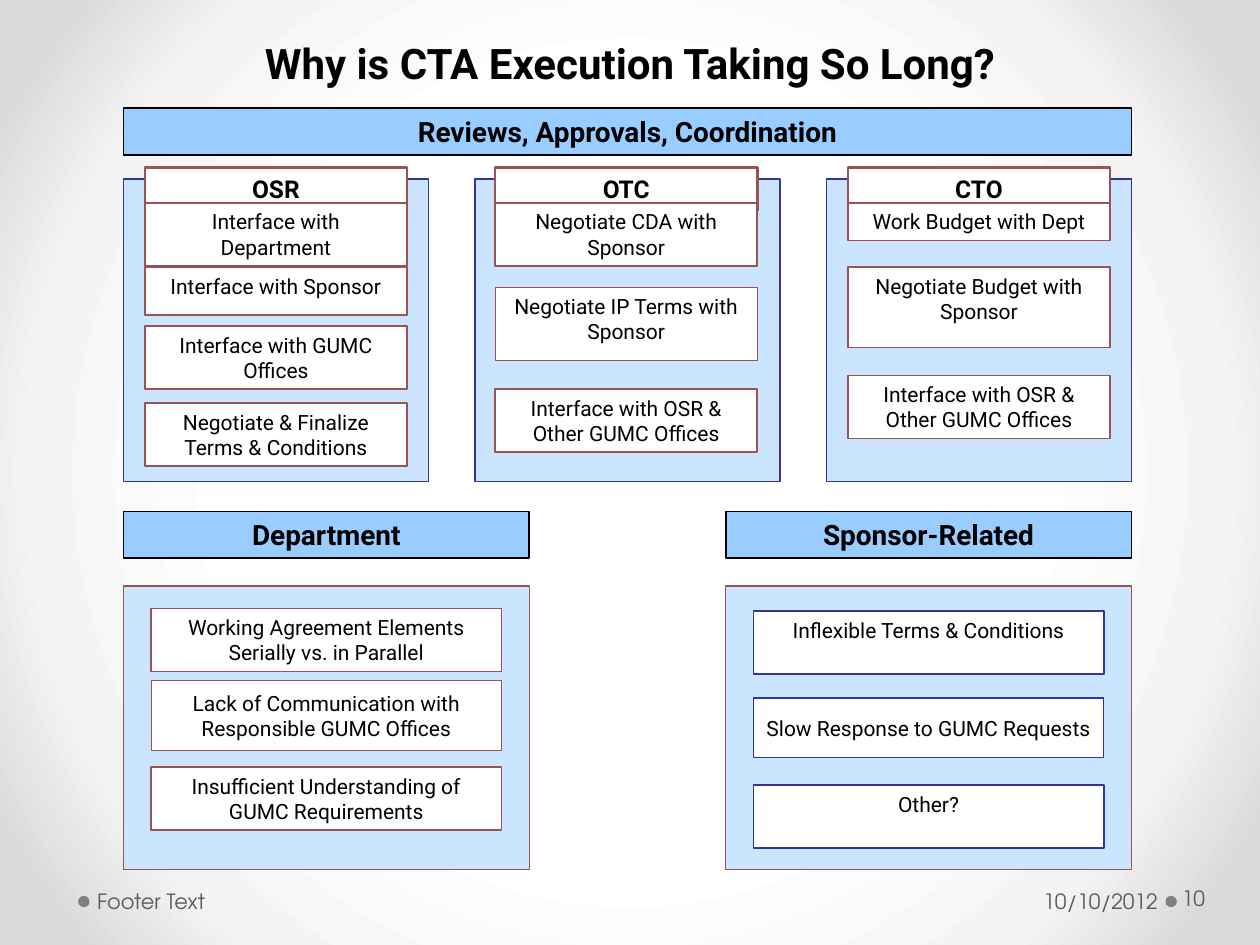
from lxml import etree
from pptx import Presentation
from pptx.dml.color import RGBColor
from pptx.enum.shapes import MSO_SHAPE
from pptx.enum.text import MSO_ANCHOR, PP_ALIGN
from pptx.oxml.ns import qn
from pptx.util import Inches, Pt

RECT, OVAL = MSO_SHAPE.RECTANGLE, MSO_SHAPE.OVAL
TOP, MIDDLE = MSO_ANCHOR.TOP, MSO_ANCHOR.MIDDLE
LEFT, CENTER, RIGHT = PP_ALIGN.LEFT, PP_ALIGN.CENTER, PP_ALIGN.RIGHT

COLORS = {
    "black": "000000", "white": "FFFFFF", "banner": "99CCFF", "panel": "CBE5FF",
    "red": "9C5252", "blue": "333399", "footer": "595959", "dot": "808080",
}
BACKGROUND = [(50, "FFFFFF"), (76, "F4F4F4"), (92, "DADADA")]
BODY_FONT, FOOTER_FONT = "Roboto", "TeX Gyre Adventor"

# Content: each item is (text, top, height, line width, anchor)
TITLE = "Why is CTA Execution Taking So Long?"
BANNER = "Reviews, Approvals, Coordination"
OFFICES = [
    ("OSR", 1.15, [
        ("Interface with Department", 1.61, 0.5, 1, TOP),
        ("Interface with Sponsor", 2.12, 0.38, 0.75, TOP),
        ("Interface with GUMC Offices", 2.59, 0.5, 1, TOP),
        ("Negotiate & Finalize Terms & Conditions", 3.2, 0.5, 1, TOP)]),
    ("OTC", 3.93, [
        ("Negotiate CDA with Sponsor", 1.61, 0.5, 1, TOP),
        ("Negotiate IP Terms with Sponsor", 2.28, 0.58, 0.75, TOP),
        ("Interface with OSR & Other GUMC Offices", 3.09, 0.5, 1, TOP)]),
    ("CTO", 6.73, [
        ("Work Budget with Dept", 1.61, 0.3, 1, TOP),
        ("Negotiate Budget with Sponsor", 2.12, 0.64, 0.75, TOP),
        ("Interface with OSR & Other GUMC Offices", 2.98, 0.5, 1, TOP)]),
]
CAUSES = [
    ("Department", "red", [
        ("Working Agreement Elements Serially vs. in Parallel", 4.83, 0.5, 1, TOP),
        ("Lack of Communication with Responsible GUMC Offices", 5.4, 0.56, 0.75, MIDDLE),
        ("Insufficient Understanding of GUMC Requirements", 6.09, 0.5, 1, TOP)]),
    ("Sponsor-Related", "blue", [
        ("Inflexible Terms & Conditions", 4.85, 0.5, 1, TOP),
        ("Slow Response to GUMC Requests", 5.54, 0.47, 0.75, MIDDLE),
        ("Other?", 6.23, 0.5, 1, TOP)]),
]
# Footer: text, left, top, width, left inset, right inset, alignment
FOOTER = [
    ("10/10/2012", 6.96, 6.95, 2.28, 0.1, 0.05, RIGHT),
    ("Footer Text", 0.72, 6.95, 3.11, 0.05, 0.1, LEFT),
    ("10", 9.35, 6.93, 0.61, 0.03, 0.05, LEFT),
]

# Layout
MARGIN, CONTENT_W = 0.98, 8
OFFICE_W, OFFICE_BOX_W = 2.42, 2.08
CAUSE_W, CAUSE_BOX_W = 3.22, 2.78
BANNER_H = 0.37


def rgb(name):
    return RGBColor.from_string(COLORS[name])


def write(sp, text, size=12, bold=False, color="black", font=BODY_FONT,
          align=CENTER, anchor=TOP, insets=(0.1, 0.1)):
    tf = sp.text_frame
    tf.word_wrap = True
    tf.vertical_anchor = anchor
    tf.margin_left, tf.margin_right = map(Inches, insets)
    p = tf.paragraphs[0]
    p.alignment = align
    r = p.add_run()
    r.text = text
    r.font.size, r.font.bold, r.font.name = Pt(size), bold, font
    r.font.color.rgb = rgb(color)


def add_shape(at, fill, line=None, width=0.75, kind=RECT):
    sp = s.shapes.add_shape(kind, *map(Inches, at))
    sp.shadow.inherit = False
    sp.fill.solid()
    sp.fill.fore_color.rgb = rgb(fill)
    if line:
        sp.line.color.rgb = rgb(line)
        sp.line.width = Pt(width)
    else:
        sp.line.fill.background()
    return sp


def add_banner(text, left, top, width):
    sp = add_shape((left, top, width, BANNER_H), "banner", "black", 1)
    write(sp, text, size=16, bold=True)


def add_items(items, left, width, line):
    for text, top, height, weight, anchor in items:
        sp = add_shape((left, top, width, height), "white", line, weight)
        write(sp, text, anchor=anchor)


def add_text(text, at, **fmt):
    write(s.shapes.add_textbox(*map(Inches, at)), text, **fmt)


def set_radial_background(stops):
    s.background.fill.gradient()
    grad = s.background._cSld.find(".//" + qn("a:gradFill"))
    for child in list(grad):
        grad.remove(child)
    stop_list = etree.SubElement(grad, qn("a:gsLst"))
    for pos, color in stops:
        stop = etree.SubElement(stop_list, qn("a:gs"), pos=str(pos * 1000))
        etree.SubElement(stop, qn("a:srgbClr"), val=color)
    circle = etree.SubElement(grad, qn("a:path"), {"path": "circle"})
    etree.SubElement(circle, qn("a:fillToRect"), dict.fromkeys("ltrb", "50000"))


prs = Presentation()
prs.slide_width, prs.slide_height = Inches(10), Inches(7.5)
s = prs.slides.add_slide(prs.slide_layouts[6])
set_radial_background(BACKGROUND)

# Footer
for left in (9.25, 0.62):
    add_shape((left, 7.11, 0.09, 0.09), "dot", kind=OVAL)
for text, left, top, width, inset_l, inset_r, align in FOOTER:
    add_text(text, (left, top, width, 0.4), color="footer", font=FOOTER_FONT,
             align=align, anchor=MIDDLE, insets=(inset_l, inset_r))

# Title and top banner
add_text(TITLE, (0, 0.25, 10, 0.5), size=24, bold=True)
add_banner(BANNER, MARGIN, 0.86, CONTENT_W)

# Lower row: causes of delay
for i, (name, line, items) in enumerate(CAUSES):
    left = MARGIN + i * (CONTENT_W - CAUSE_W)
    add_shape((left, 4.65, CAUSE_W, 2.25), "panel", "red")
    add_banner(name, left, 4.06, CAUSE_W)
    add_items(items, left + (CAUSE_W - CAUSE_BOX_W) / 2, CAUSE_BOX_W, line)

# Upper row: reviewing offices
for i, (name, box_left, items) in enumerate(OFFICES):
    left = MARGIN + i * (CONTENT_W - OFFICE_W) / 2
    add_shape((left, 1.42, OFFICE_W, 2.4), "panel", "blue")
    header = add_shape((box_left, 1.33, OFFICE_BOX_W, 0.34), "white", "red", 1.5)
    write(header, name, size=14, bold=True)
    add_items(items, box_left, OFFICE_BOX_W, "red")

prs.save("out.pptx")
